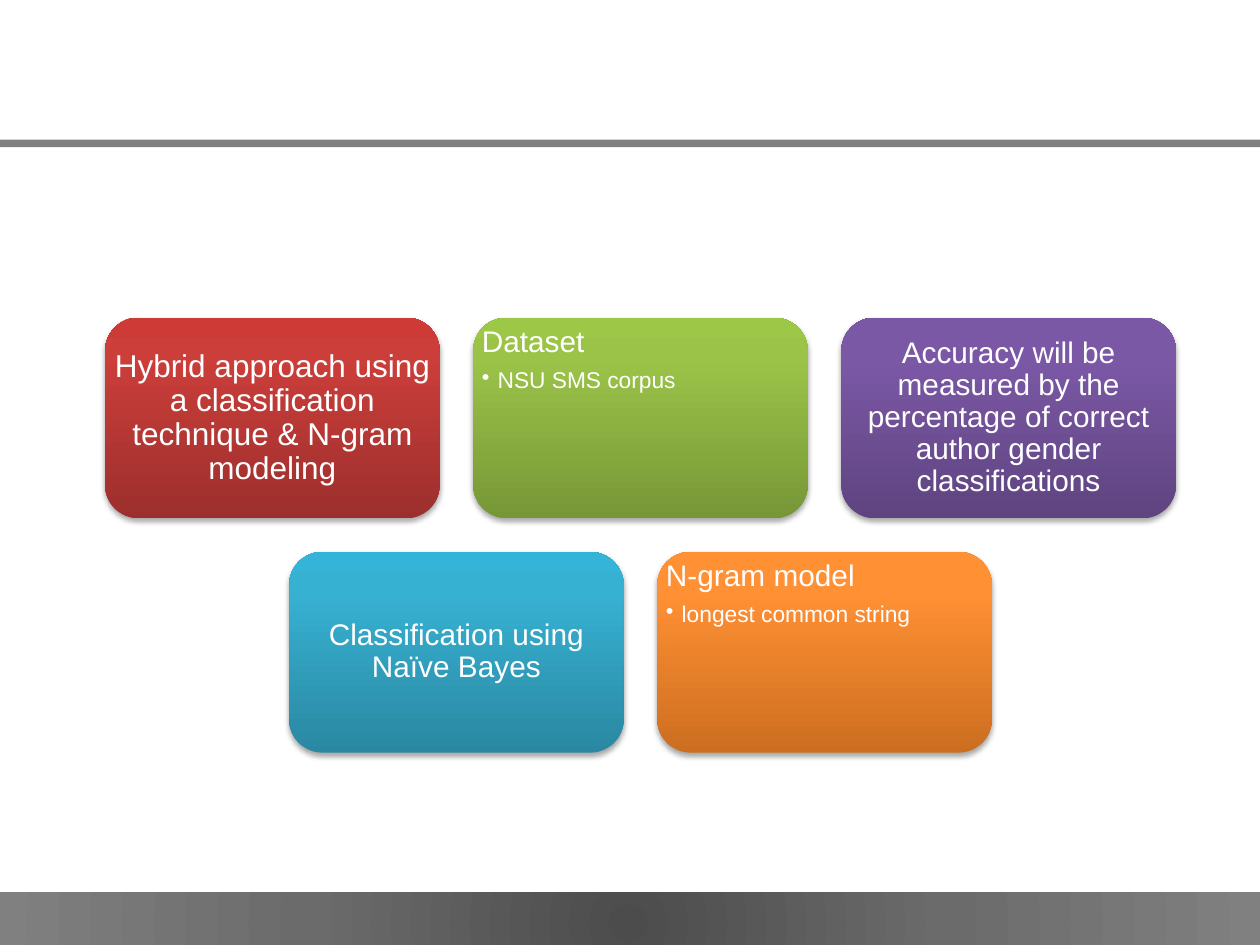
from lxml.etree import SubElement as Sub
from pptx import Presentation
from pptx.dml.color import RGBColor as RGB
from pptx.enum.shapes import MSO_SHAPE as Shape
from pptx.enum.text import MSO_ANCHOR as Anchor, PP_ALIGN as Align
from pptx.oxml.ns import qn
from pptx.util import Pt

WHITE = RGB(0xFF, 0xFF, 0xFF)
GREY = RGB(0x80, 0x80, 0x80)
BLACK = RGB(0x00, 0x00, 0x00)
SMOKE = (RGB(0x4C, 0x4C, 0x4C), RGB(0x6B, 0x6B, 0x6B), GREY)
RED = (RGB(0x9C, 0x2F, 0x2D), RGB(0xCB, 0x3E, 0x3A), RGB(0xCE, 0x3B, 0x37))
GREEN = (RGB(0x77, 0x97, 0x37), RGB(0x9B, 0xC3, 0x48), RGB(0x9D, 0xC7, 0x46))
PURPLE = (RGB(0x5F, 0x44, 0x80), RGB(0x7B, 0x58, 0xA6), RGB(0x7C, 0x57, 0xA8))
BLUE = (RGB(0x2A, 0x88, 0xA2), RGB(0x37, 0xB1, 0xD2), RGB(0x34, 0xB4, 0xD6))
ORANGE = (RGB(0xCC, 0x6E, 0x20), RGB(0xFF, 0x90, 0x34), RGB(0xFF, 0x91, 0x36))

WIDE = 191.25
HIGH = WIDE * 0.6
GAP = WIDE / 10
LEFT, TOP = 60, 181.5

ROWS = [
    [
        (RED, 18, "Hybrid approach using a classification technique & N-gram modeling", None),
        (GREEN, 17, "Dataset", "NSU SMS corpus"),
        (PURPLE, 17,
         "Accuracy will be measured by the percentage of correct author gender classifications", None),
    ],
    [
        (BLUE, 17, "Classification using Naïve Bayes", None),
        (ORANGE, 17, "N-gram model", "longest common string"),
    ],
]


def apply(item, form):
    """Set each attribute of item from the form dict."""
    for name, value in form.items():
        setattr(item, name, value)


def block(slide, kind, box):
    """Add a preset shape with no line and no shadow."""
    shape = slide.shapes.add_shape(kind, *map(Pt, box))
    shape.line.fill.background()
    shape.shadow.inherit = False
    return shape


def blend(shape, tones, middle, round_out=False):
    """Fill a shape with a three-stop gradient, upward or from the centre."""
    shape.fill.gradient()
    grad = shape._element.spPr.find(qn("a:gradFill"))
    for child in list(grad):
        grad.remove(child)
    stops = Sub(grad, qn("a:gsLst"))
    for place, tone in zip((0, middle, 100), tones):
        stop = Sub(stops, qn("a:gs"), pos=str(place * 1000))
        Sub(stop, qn("a:srgbClr"), val=str(tone))
    if round_out:
        way = Sub(grad, qn("a:path"), path="circle")
        Sub(way, qn("a:fillToRect"), l="50000", t="50000", r="50000", b="50000")
    else:
        Sub(grad, qn("a:lin"), ang="16200000", scaled="0")


def shade(shape):
    """Give a shape a soft shadow below it."""
    effects = shape._element.spPr.find(qn("a:effectLst"))
    drop = Sub(effects, qn("a:outerShdw"), blurRad=str(Pt(3.1)), dist=str(Pt(1.8)),
               dir="5400000", rotWithShape="0")
    tone = Sub(drop, qn("a:srgbClr"), val=str(BLACK))
    Sub(tone, qn("a:alpha"), val="35000")


def write(para, text, size, form):
    """Put white text in a paragraph and format it."""
    para.text = text
    apply(para, {"line_spacing": 0.9, **form})
    apply(para.font, {"size": Pt(size), "name": "Arial"})
    para.font.color.rgb = WHITE


def bullet(para):
    """Turn a paragraph into a bulleted one."""
    props = para._p.get_or_add_pPr()
    props.set("marL", str(Pt(9)))
    props.set("indent", str(Pt(-9)))
    Sub(props, qn("a:buChar"), char="•")


def card(slide, left, top, tones, size, head, point):
    """Draw one rounded card with its text."""
    box = (left, top, WIDE, HIGH)
    shape = block(slide, Shape.ROUNDED_RECTANGLE, box)
    blend(shape, tones, 80)
    shade(shape)
    frame = slide.shapes.add_textbox(*map(Pt, box)).text_frame
    sides = ("margin_left", "margin_top", "margin_right", "margin_bottom")
    apply(frame, dict.fromkeys(sides, Pt(5)))
    apply(frame, {"word_wrap": True, "vertical_anchor": Anchor.TOP if point else Anchor.MIDDLE})
    align = Align.LEFT if point else Align.CENTER
    write(frame.paragraphs[0], head, size, {"alignment": align, "space_after": Pt(6)})
    if point:
        para = frame.add_paragraph()
        bullet(para)
        write(para, point, 13, {"level": 1, "space_after": Pt(2)})


def main():
    """Build the slide and save it."""
    deck = Presentation()
    apply(deck, {"slide_width": Pt(720), "slide_height": Pt(540)})
    slide = deck.slides.add_slide(deck.slide_layouts[6])
    foot = block(slide, Shape.RECTANGLE, (-2, 509.8, 722, 36))
    blend(foot, SMOKE, 50, round_out=True)
    rule = block(slide, Shape.RECTANGLE, (0, 79.8, 720, 4.3))
    rule.fill.solid()
    rule.fill.fore_color.rgb = GREY
    for row, cards in enumerate(ROWS):
        start = LEFT + (len(ROWS[0]) - len(cards)) * (WIDE + GAP) / 2
        for col, parts in enumerate(cards):
            card(slide, start + col * (WIDE + GAP), TOP + row * (HIGH + GAP), *parts)
    deck.save("out.pptx")


if __name__ == "__main__":
    main()
